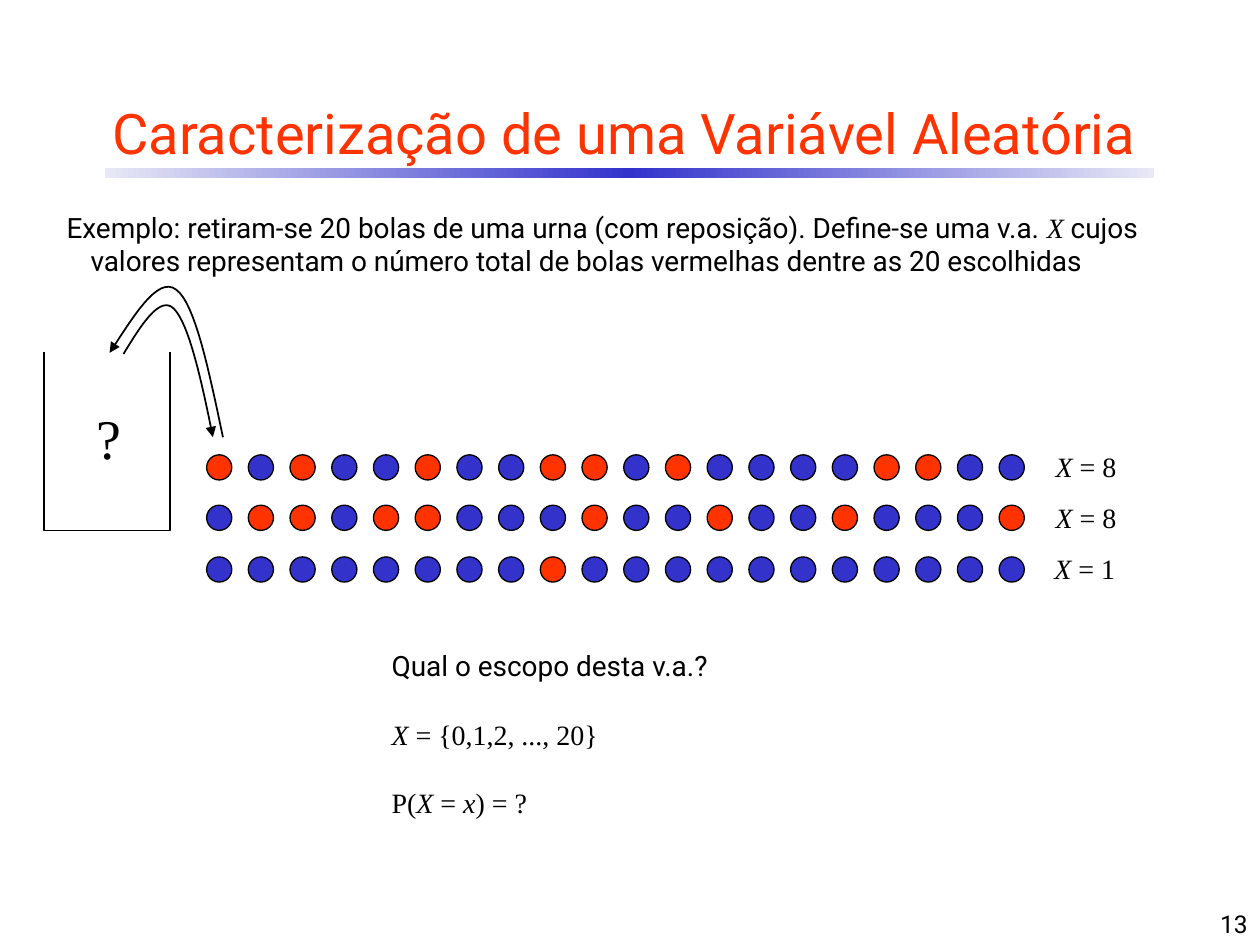
from copy import deepcopy

from lxml import etree
from pptx import Presentation
from pptx.dml.color import RGBColor
from pptx.enum.shapes import MSO_SHAPE
from pptx.enum.text import MSO_ANCHOR, PP_ALIGN
from pptx.oxml.ns import qn
from pptx.util import Inches, Pt

RECT, OVAL = MSO_SHAPE.RECTANGLE, MSO_SHAPE.OVAL
TOP, MIDDLE, BOTTOM = MSO_ANCHOR.TOP, MSO_ANCHOR.MIDDLE, MSO_ANCHOR.BOTTOM
LEFT, CENTER, RIGHT = PP_ALIGN.LEFT, PP_ALIGN.CENTER, PP_ALIGN.RIGHT

COLORS = {"red": "FF3300", "blue": "3333CC", "pale": "E8E8F6", "black": "000000"}
RGB = {name: RGBColor.from_string(value) for name, value in COLORS.items()}
SANS, SERIF = "Roboto", "Times New Roman"

prs = Presentation()
prs.slide_width, prs.slide_height = Inches(10), Inches(7.5)
s = prs.slides.add_slide(prs.slide_layouts[6])


def add_text(box, paragraphs, size=16, color="black", align=LEFT, anchor=TOP,
             wrap=True, hanging=False, gap=0):
    """Each paragraph is a list of (text, font, italic) runs."""
    tf = s.shapes.add_textbox(*[Inches(v) for v in box]).text_frame
    tf.word_wrap, tf.vertical_anchor = wrap, anchor
    for i, runs in enumerate(paragraphs):
        p = tf.add_paragraph() if i else tf.paragraphs[0]
        p.alignment = align
        if i:
            p.space_before = Pt(gap)
        if hanging:
            pPr = p._p.get_or_add_pPr()
            pPr.set("marL", str(Inches(0.19)))
            pPr.set("indent", str(-Inches(0.19)))
        for text, font, italic in runs:
            r = p.add_run()
            r.text = text
            r.font.name, r.font.size, r.font.italic = font, Pt(size), italic
            r.font.color.rgb = RGB[color]


def add_path(points, width):
    """Open black outline through points given in inches."""
    points = [(Inches(x), Inches(y)) for x, y in points]
    builder = s.shapes.build_freeform(*points[0])
    builder.add_line_segments(points[1:], close=False)
    sp = builder.convert_to_shape()
    sp.shadow.inherit = False
    sp.fill.background()
    sp.line.color.rgb, sp.line.width = RGB["black"], Pt(width)
    return sp


# Gradient bar under the title
bar = s.shapes.add_shape(RECT, Inches(0.83), Inches(1.33), Inches(8.33), Inches(0.08))
bar.shadow.inherit = False
bar.line.fill.background()
bar.fill.gradient()
bar.fill.gradient_angle = 0
for stop in bar.fill.gradient_stops:
    stop.color.rgb = RGB["pale"]
stops = bar._element.spPr.find(qn("a:gradFill")).find(qn("a:gsLst"))
stops.insert(1, deepcopy(stops[0]))
for stop, name, position in zip(bar.fill.gradient_stops, ("pale", "blue", "pale"), (0, 0.5, 1)):
    stop.color.rgb, stop.position = RGB[name], position

# Title, page number and example
add_text((0.33, 0.67, 9.25, 0.75),
         [[("Caracterização de uma Variável Aleatória", SANS, False)]],
         size=32, color="red", align=CENTER, anchor=MIDDLE)
add_text((7.92, 7, 2.08, 0.5), [[("13", SANS, False)]], size=14, align=RIGHT, anchor=BOTTOM)
add_text((0.43, 1.62, 9.19, 0.64), [[
    ("Exemplo: retiram-se 20 bolas de uma urna (com reposição). Define-se uma v.a. ", SANS, False),
    ("X", SERIF, True),
    (" cujos valores representam o número total de bolas vermelhas dentre as 20 escolhidas",
     SANS, False),
]], hanging=True)

# Urn
add_path([(0.35, 2.79), (0.35, 4.21), (1.35, 4.21), (1.35, 2.79)], 0.75)
add_text((0.67, 3.15, 0.4, 0.64), [[("?", SERIF, False)]], size=32, wrap=False)

# Curved arrows: two cubic curves each, sampled at equal steps
STEPS = 16
arrows = [
    ("a:tailEnd", [(0.98, 2.81), (1.12, 2.58), (1.27, 2.34), (1.38, 2.45),
                   (1.5, 2.57), (1.6, 3.02), (1.69, 3.47)]),
    ("a:headEnd", [(0.87, 2.8), (1.05, 2.53), (1.25, 2.18), (1.4, 2.3),
                   (1.55, 2.41), (1.66, 2.95), (1.77, 3.47)]),
]
for end, controls in arrows:
    points = [controls[0]]
    for start in (0, 3):
        for step in range(1, STEPS + 1):
            t = step / STEPS
            weights = ((1 - t) ** 3, 3 * t * (1 - t) ** 2, 3 * t ** 2 * (1 - t), t ** 3)
            curve = controls[start:start + 4]
            points.append(tuple(sum(w * c[axis] for w, c in zip(weights, curve))
                                for axis in (0, 1)))
    sp = add_path(points, 1)
    etree.SubElement(sp.line._get_or_add_ln(), qn(end), type="triangle")

# Three samples of 20 balls and the value of X for each
samples = [
    ("RBRBBRBBRRBRBBBBRRBB", 3.61, 8.28),
    ("BRRBRRBBBRBBRBBRBBBR", 4.01, 8.28),
    ("BBBBBBBBRBBBBBBBBBBB", 4.42, 8.27),
]
PITCH = (7.93 - 1.64) / 19
for balls, top, label_left in samples:
    row = s.shapes.add_group_shape()
    for i, ball in enumerate(balls):
        sp = row.shapes.add_shape(OVAL, Inches(1.64 + i * PITCH), Inches(top),
                                  Inches(0.2), Inches(0.2))
        sp.shadow.inherit = False
        sp.fill.solid()
        sp.fill.fore_color.rgb = RGB["red" if ball == "R" else "blue"]
        sp.line.color.rgb, sp.line.width = RGB["black"], Pt(0.75)
    add_text((label_left, top - 0.09, 0.69, 0.37),
             [[("X ", SERIF, True), (f"= {balls.count('R')}", SERIF, False)]], wrap=False)

# Questions about the variable
add_text((3.01, 5.1, 4.07, 1.45), [
    [("Qual o escopo desta v.a.?", SANS, False)],
    [("X", SERIF, True), (" = {0,1,2, ..., 20}", SERIF, False)],
    [("P(", SERIF, False), ("X", SERIF, True), (" = ", SERIF, False),
     ("x", SERIF, True), (") = ?", SERIF, False)],
], hanging=True, gap=20)

prs.save("out.pptx")
